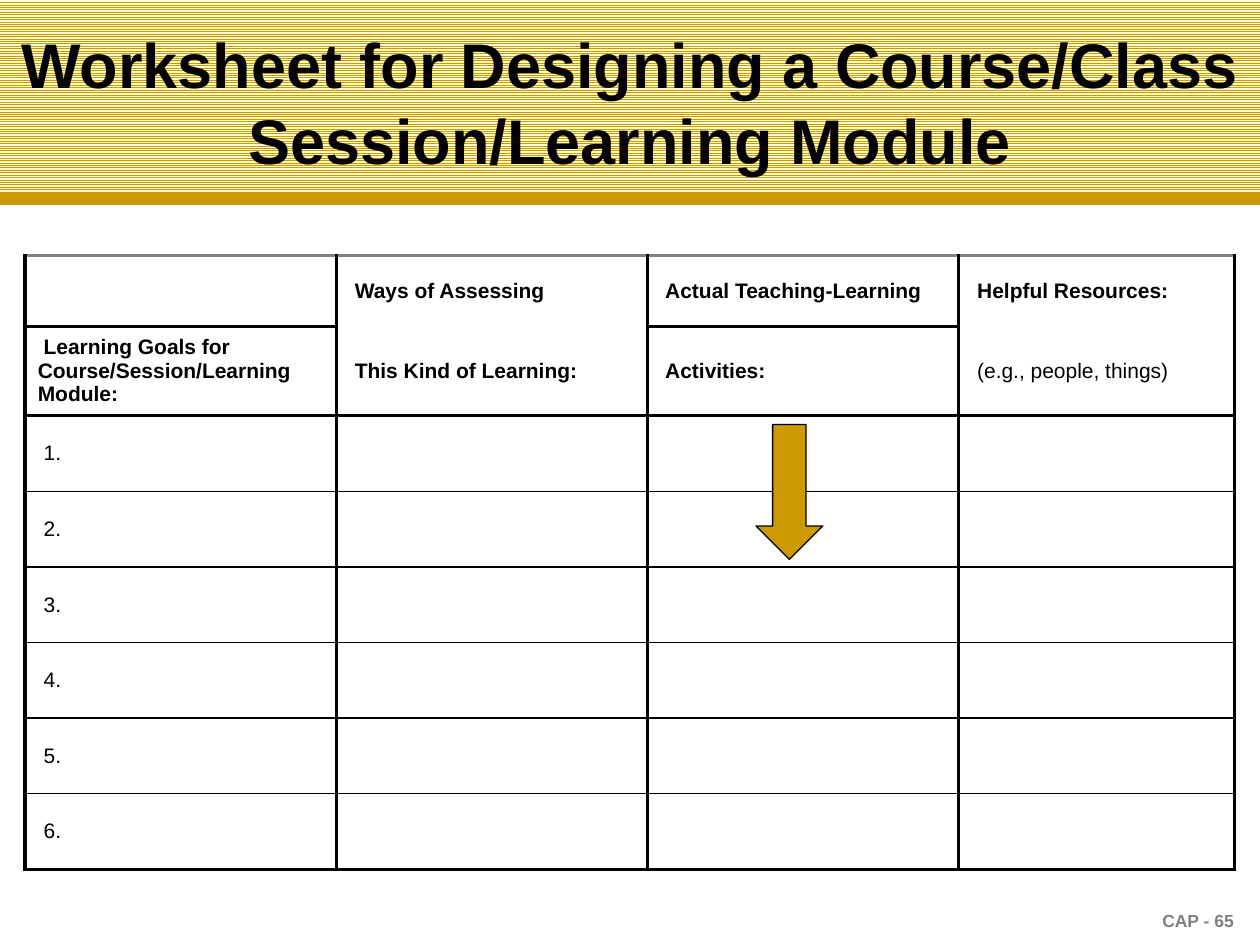
import pptx
import pptx.dml.color
import pptx.enum.dml
import pptx.enum.shapes
import pptx.enum.text
import pptx.oxml
import pptx.oxml.ns
import pptx.util

Inches = pptx.util.Inches
Pt = pptx.util.Pt
Shape = pptx.enum.shapes.MSO_SHAPE
Align = pptx.enum.text.PP_ALIGN
Anchor = pptx.enum.text.MSO_ANCHOR

COLORS = {"gold": "CC9900", "cream": "FFFFCC", "ink": "000000",
          "gray": "808080", "white": "FFFFFF"}
HEADS = [
    ["", " Ways of Assessing", " Actual Teaching-Learning", " Helpful Resources:"],
    [" Learning Goals for Course/Session/Learning Module:",
     " This Kind of Learning:", " Activities:", " (e.g., people, things)"],
]
GOALS = 6
RULES = [2.25, 2.25, 2] + [1] * (GOALS - 1) + [2]


def color(name):
    """Return the named colour as an RGB value."""
    return pptx.dml.color.RGBColor.from_string(COLORS[name])


def style(item, values):
    """Set each named attribute of an item."""
    for key, value in values.items():
        setattr(item, key, value)


def write(frame, text, size, tint="ink", bold=True, align=Align.LEFT):
    """Put one formatted paragraph in a text frame."""
    frame.text = text
    par = frame.paragraphs[0]
    par.alignment = align
    for font in [par.font] + [run.font for run in par.runs]:
        style(font, {"name": "Arial", "size": Pt(size), "bold": bold})
        font.color.rgb = color(tint)


def place(shape, box):
    """Move a shape to a box given in inches."""
    style(shape, dict(zip(("left", "top", "width", "height"), map(Inches, box))))


def edge(cell, side, width, tint="ink"):
    """Draw one border of a cell, or clear it when the width is zero."""
    fill = (f'<a:solidFill><a:srgbClr val="{COLORS[tint]}"/></a:solidFill>'
            if width else "<a:noFill/>")
    line = pptx.oxml.parse_xml(
        f'<a:ln{side} {pptx.oxml.ns.nsdecls("a")} w="{int(Pt(width))}">{fill}</a:ln{side}>')
    cell._tc.get_or_add_tcPr().append(line)


def banner(slide, box):
    """Add the striped band, the rule below it and the title."""
    left, top, width, height = box
    band = slide.shapes.add_shape(Shape.RECTANGLE, *map(Inches, box))
    band.shadow.inherit = False
    band.fill.patterned()
    band.fill.pattern = pptx.enum.dml.MSO_PATTERN.NARROW_HORIZONTAL
    band.fill.fore_color.rgb = color("gold")
    band.fill.back_color.rgb = color("cream")
    band.line.fill.background()

    base = Inches(top + height)
    rule = slide.shapes.add_connector(
        pptx.enum.shapes.MSO_CONNECTOR.STRAIGHT,
        Inches(left), base, Inches(left + width), base)
    rule.line.color.rgb = color("gold")
    rule.line.width = Pt(6.5)
    pptx.oxml.ns.qn("a:effectLst")
    rule._element.spPr.append(
        pptx.oxml.parse_xml(f'<a:effectLst {pptx.oxml.ns.nsdecls("a")}/>'))

    title = slide.shapes.title
    slide.shapes._spTree.append(title._element)
    place(title, (left, top + 0.18, width, 1.25))
    write(title.text_frame, "Worksheet for Designing a Course/Class Session/Learning Module",
          36, align=Align.CENTER)
    style(title.text_frame, {"vertical_anchor": Anchor.MIDDLE, "word_wrap": True,
                             "auto_size": pptx.enum.text.MSO_AUTO_SIZE.NONE})


def sheet(slide, box):
    """Add the worksheet table with two header rows and numbered goals."""
    rows = HEADS + [[f" {num}.", "", "", ""] for num in range(1, GOALS + 1)]
    table = slide.shapes.add_table(len(rows), 4, *map(Inches, box)).table
    style(table, {"first_row": False, "horz_banding": False})
    for col, width in zip(table.columns, [2.47] * 3 + [2.19]):
        col.width = Inches(width)
    for row, height in zip(table.rows, [0.56, 0.71] + [0.6] * GOALS):
        row.height = Inches(height)
    for r, texts in enumerate(rows):
        for c, text in enumerate(texts):
            cell = table.cell(r, c)
            heading = r < 2 and (r, c) != (1, 3)
            write(cell.text_frame, text, 12, bold=heading)
            cell.vertical_anchor = Anchor.MIDDLE
            edge(cell, "L", 2.25)
            edge(cell, "R", 2.25)
            for side, line in (("T", r), ("B", r + 1)):
                joined = line == 1 and c % 2
                edge(cell, side, 0 if joined else RULES[line],
                     "ink" if line else "gray")
            cell.fill.solid()
            cell.fill.fore_color.rgb = color("white")


def arrow(slide, box):
    """Add the gold arrow that points down the activities column."""
    shape = slide.shapes.add_shape(Shape.DOWN_ARROW, *map(Inches, box))
    shape.shadow.inherit = False
    shape.fill.solid()
    shape.fill.fore_color.rgb = color("gold")
    shape.line.color.rgb = color("ink")
    shape.line.width = Pt(0.75)


def footer(slide, box):
    """Add the page label."""
    frame = slide.shapes.add_textbox(*map(Inches, box)).text_frame
    frame.word_wrap = True
    write(frame, "CAP - 65", 10, "gray", align=Align.RIGHT)


def main():
    """Build and save the slide."""
    deck = pptx.Presentation()
    style(deck, {"slide_width": Inches(10), "slide_height": Inches(7.5)})
    slide = deck.slides.add_slide(deck.slide_layouts[5])
    banner(slide, (0, 0, 10, 1.58))
    footer(slide, (7.56, 7.17, 2.33, 0.18))
    sheet(slide, (0.2, 2.03, 9.6, 4.87))
    arrow(slide, (6, 3.37, 0.53, 1.07))
    deck.save("out.pptx")


if __name__ == "__main__":
    main()
